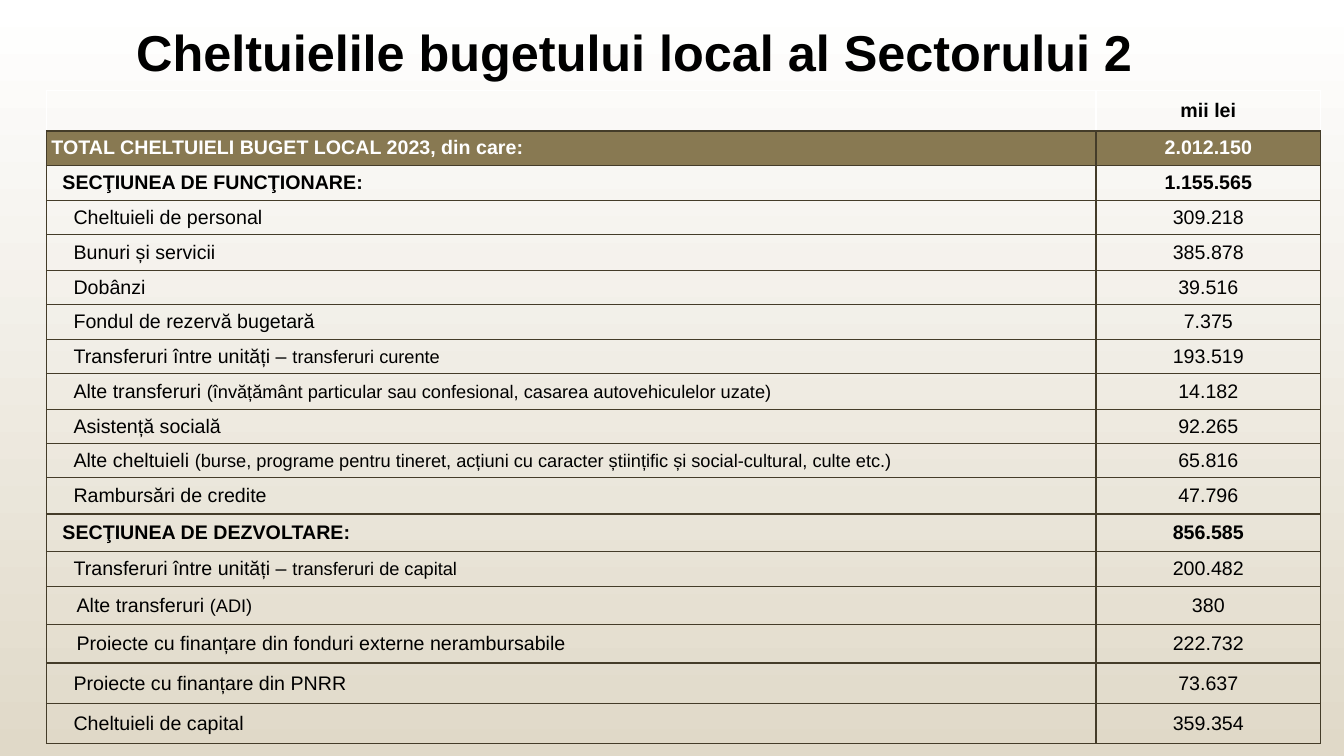
from dataclasses import dataclass

from lxml import etree
from pptx import Presentation
from pptx.dml.color import RGBColor
from pptx.enum.text import MSO_ANCHOR, PP_ALIGN
from pptx.oxml.ns import qn
from pptx.slide import Slide
from pptx.table import Table, _Cell
from pptx.text.text import _Paragraph
from pptx.util import Inches, Pt

TOP, MIDDLE = MSO_ANCHOR.TOP, MSO_ANCHOR.MIDDLE
LEFT, CENTER = PP_ALIGN.LEFT, PP_ALIGN.CENTER

FONT = "Arial"
COLORS = {
    "text": "000000",
    "white": "FFFFFF",
    "sand": "E0D9C8",
    "total": "887952",
    "border": "443C29",
}
COLUMN_WIDTHS = (10.41, 2.23)


@dataclass
class BudgetRow:
    """One line of the budget table."""
    label: str
    value: str
    height: float = 0.34
    note: str = ""
    indent: float = 0.27
    bold: bool = False
    color: str = "text"
    fill: str = ""
    edge: str = "border"


ROWS = [
    BudgetRow("", "mii lei", 0.4, bold=True, edge="white"),
    BudgetRow("TOTAL CHELTUIELI BUGET LOCAL 2023, din care:", "2.012.150",
              indent=0.05, bold=True, color="white", fill="total"),
    BudgetRow("SECŢIUNEA DE FUNCŢIONARE:", "1.155.565", 0.35, indent=0.16, bold=True),
    BudgetRow("Cheltuieli de personal", "309.218"),
    BudgetRow("Bunuri și servicii", "385.878", 0.35),
    BudgetRow("Dobânzi", "39.516"),
    BudgetRow("Fondul de rezervă bugetară", "7.375", 0.35),
    BudgetRow("Transferuri între unități – ", "193.519", note="transferuri curente"),
    BudgetRow("Alte transferuri ", "14.182", 0.35,
              "(învățământ particular sau confesional, casarea autovehiculelor uzate)"),
    BudgetRow("Asistență socială", "92.265"),
    BudgetRow("Alte cheltuieli ", "65.816",
              note="(burse, programe pentru tineret, acțiuni cu caracter științific "
                   "și social-cultural, culte etc.)"),
    BudgetRow("Rambursări de credite", "47.796", 0.36),
    BudgetRow("SECŢIUNEA DE DEZVOLTARE:", "856.585", 0.37, indent=0.16, bold=True),
    BudgetRow("Transferuri între unități – ", "200.482", 0.35, "transferuri de capital"),
    BudgetRow("Alte transferuri ", "380", 0.38, "(ADI)", 0.3),
    BudgetRow("Proiecte cu finanțare din fonduri externe nerambursabile", "222.732",
              0.38, indent=0.3),
    BudgetRow("Proiecte cu finanțare din PNRR", "73.637", 0.4),
    BudgetRow("Cheltuieli de capital", "359.354", 0.4),
]


def rgb(name: str) -> RGBColor:
    """Return a named colour."""
    return RGBColor.from_string(COLORS[name])


def add_run(p: _Paragraph, text: str, size: float, bold: bool, color: str) -> None:
    """Add a formatted run to a paragraph."""
    r = p.add_run()
    r.text = text
    r.font.name, r.font.size, r.font.bold = FONT, Pt(size), bold
    r.font.color.rgb = rgb(color)


def set_borders(cell: _Cell, edge: str) -> None:
    """Draw the cell borders, with a dark line at the bottom."""
    tc_pr = cell._tc.get_or_add_tcPr()
    for side, color in (("L", edge), ("R", edge), ("T", edge), ("B", "border")):
        ln = etree.SubElement(tc_pr, qn(f"a:ln{side}"), w=str(Pt(1)))
        fill = etree.SubElement(ln, qn("a:solidFill"))
        etree.SubElement(fill, qn("a:srgbClr"), val=COLORS[color])


def format_cell(cell: _Cell, row: BudgetRow, indent: float) -> None:
    """Set borders, fill, margins and anchor of a cell."""
    set_borders(cell, row.edge)
    if row.fill:
        cell.fill.solid()
        cell.fill.fore_color.rgb = rgb(row.fill)
    else:
        cell.fill.background()
    cell.margin_left = Inches(indent)
    cell.margin_right = cell.margin_top = cell.margin_bottom = 0
    cell.vertical_anchor = MIDDLE


def fill_row(table: Table, index: int, row: BudgetRow) -> None:
    """Write one budget line into the table."""
    table.rows[index].height = Inches(row.height)
    label, value = table.cell(index, 0), table.cell(index, 1)
    format_cell(label, row, row.indent)
    format_cell(value, row, 0)
    p = label.text_frame.paragraphs[0]
    if row.label:
        add_run(p, row.label, 14, row.bold, row.color)
    if row.note:
        add_run(p, row.note, 13, row.bold, row.color)
    p = value.text_frame.paragraphs[0]
    p.alignment = CENTER
    add_run(p, row.value, 14, row.bold, row.color)


def add_budget_table(s: Slide) -> None:
    """Add the table of expenses."""
    height = sum(row.height for row in ROWS)
    table = s.shapes.add_table(len(ROWS), len(COLUMN_WIDTHS), Inches(0.46), Inches(0.9),
                               Inches(sum(COLUMN_WIDTHS)), Inches(height)).table
    table.first_row = table.horz_banding = False
    for column, width in zip(table.columns, COLUMN_WIDTHS):
        column.width = Inches(width)
    for index, row in enumerate(ROWS):
        fill_row(table, index, row)


def set_title(s: Slide) -> None:
    """Place and format the slide title."""
    sp = s.shapes.title
    sp.left, sp.top, sp.width, sp.height = map(Inches, (1.25, 0.1, 13.33, 0.95))
    tf = sp.text_frame
    tf.vertical_anchor = TOP
    tf.margin_top = Inches(0.11)
    p = tf.paragraphs[0]
    p.alignment = LEFT
    add_run(p, "Cheltuielile bugetului local al Sectorului 2", 36, True, "text")


def set_background(s: Slide) -> None:
    """Fill the background from white down to sand."""
    fill = s.background.fill
    fill.gradient()
    fill.gradient_angle = 270
    for stop, color, position in zip(fill.gradient_stops, ("white", "sand"), (0, 1)):
        stop.color.rgb = rgb(color)
        stop.position = position


def main() -> None:
    """Build and save the slide."""
    prs = Presentation()
    prs.slide_width, prs.slide_height = Inches(13.33), Inches(7.5)
    s = prs.slides.add_slide(prs.slide_layouts[5])
    set_background(s)
    set_title(s)
    add_budget_table(s)
    prs.save("out.pptx")


if __name__ == "__main__":
    main()
